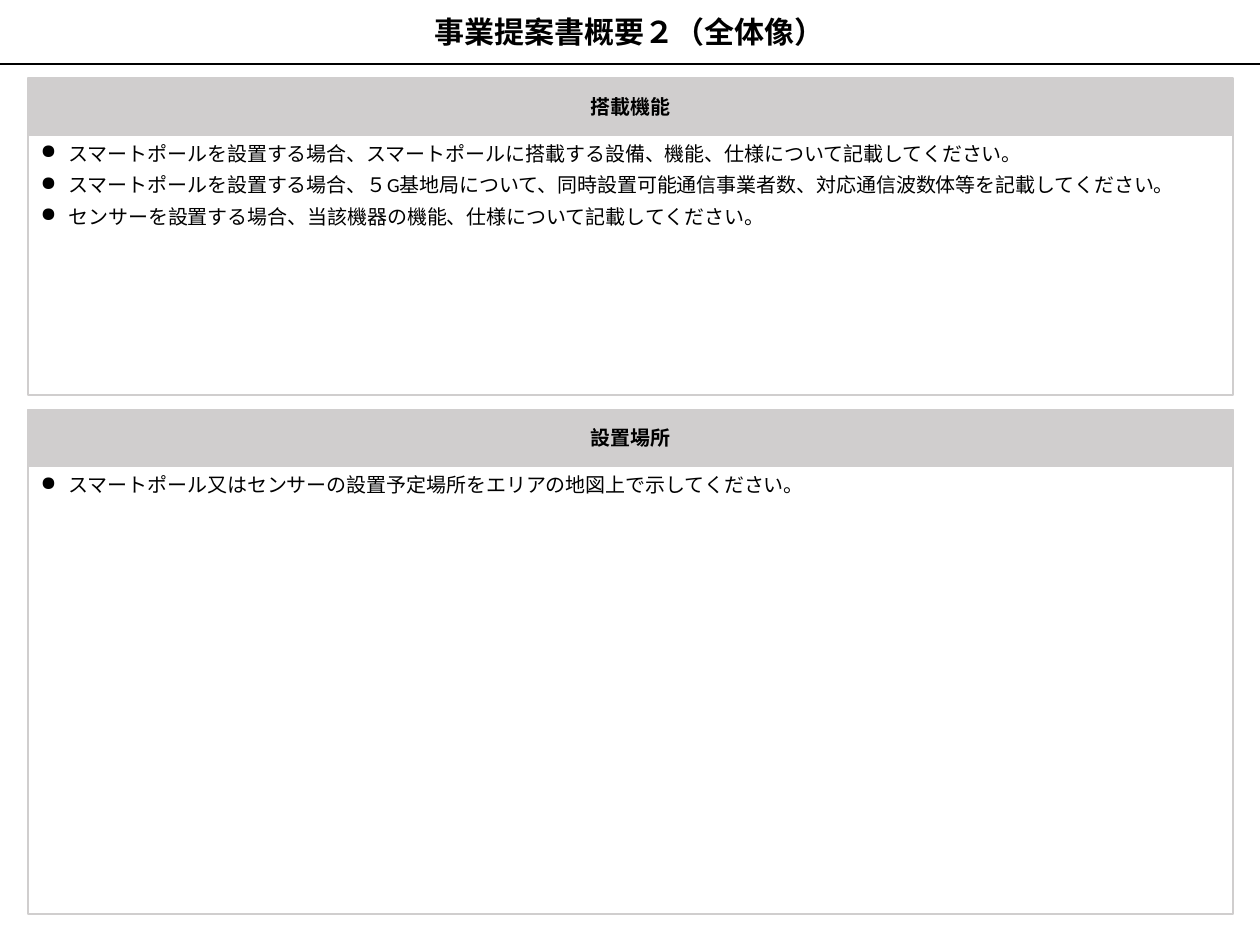
from dataclasses import dataclass

from lxml.etree import SubElement
from pptx import Presentation
from pptx.dml.color import RGBColor
from pptx.enum.shapes import MSO_CONNECTOR, MSO_SHAPE
from pptx.enum.text import MSO_ANCHOR as Anchor, PP_ALIGN as Align
from pptx.oxml.ns import qn
from pptx.shapes.autoshape import Shape
from pptx.slide import Slide
from pptx.text.text import _Paragraph as Paragraph
from pptx.util import Inches, Pt

BLACK = RGBColor(0x00, 0x00, 0x00)
WHITE = RGBColor(0xFF, 0xFF, 0xFF)
GRAY = RGBColor(0xD0, 0xCE, 0xCE)

SLIDE_WIDTH, SLIDE_HEIGHT = 14, 10.5
TITLE_HEIGHT = 0.71
SECTION_LEFT, SECTION_WIDTH = 0.31, 13.39
HEADING_HEIGHT = 0.63
SECTION_TOP, SECTION_GAP = 0.87, 0.16
BULLET_INDENT = 0.31

TITLE_FONT = {"name": "Arial", "size": Pt(24), "bold": True}
HEADING_FONT = {"name": "Calibri", "size": Pt(16), "bold": True}
BODY_FONT = {"name": "Calibri", "size": Pt(16), "bold": False}
SECTION_MARGINS = {
    "margin_left": Inches(0.14),
    "margin_right": Inches(0.14),
    "margin_top": Inches(0.07),
    "margin_bottom": Inches(0.07),
}
CENTERED = {"vertical_anchor": Anchor.MIDDLE, "word_wrap": True}
HEADING_FRAME = SECTION_MARGINS | {"vertical_anchor": Anchor.MIDDLE, "word_wrap": False}
BODY_FRAME = SECTION_MARGINS | {"vertical_anchor": Anchor.TOP, "word_wrap": True}


@dataclass(frozen=True)
class Section:
    heading: str
    body_height: float
    items: tuple[str, ...]


@dataclass(frozen=True)
class BoxStyle:
    fill: RGBColor
    line: RGBColor
    line_width: float
    frame: dict
    font: dict
    align: Align
    bulleted: bool = False


TITLE_STYLE = BoxStyle(WHITE, WHITE, 1, CENTERED, TITLE_FONT, Align.CENTER)
HEADING_STYLE = BoxStyle(GRAY, GRAY, 1.5, HEADING_FRAME, HEADING_FONT, Align.CENTER)
BODY_STYLE = BoxStyle(WHITE, GRAY, 1.5, BODY_FRAME, BODY_FONT, Align.LEFT, bulleted=True)

TITLE = "事業提案書概要２（全体像）"
SECTIONS = (
    Section("搭載機能", 2.89, (
        "スマートポールを設置する場合、スマートポールに搭載する設備、機能、仕様について記載してください。",
        "スマートポールを設置する場合、５G基地局について、同時設置可能通信事業者数、対応通信波数体等を記載してください。",
        "センサーを設置する場合、当該機器の機能、仕様について記載してください。",
    )),
    Section("設置場所", 4.98, (
        "スマートポール又はセンサーの設置予定場所をエリアの地図上で示してください。",
    )),
)


def apply_format(target: object, values: dict) -> None:
    for name, value in values.items():
        setattr(target, name, value)


def add_bullet(paragraph: Paragraph) -> None:
    """Give the paragraph a round bullet with a hanging indent."""
    paragraph.space_before = Pt(6)
    properties = paragraph._p.get_or_add_pPr()
    properties.set("marL", str(Inches(BULLET_INDENT)))
    properties.set("indent", str(-Inches(BULLET_INDENT)))
    SubElement(properties, qn("a:buChar"), char="●")


def add_box(slide: Slide, left: float, top: float, width: float, height: float,
            texts: tuple[str, ...], style: BoxStyle) -> Shape:
    """Draw a rectangle holding one paragraph per text."""
    shape = slide.shapes.add_shape(
        MSO_SHAPE.RECTANGLE, Inches(left), Inches(top), Inches(width), Inches(height))
    shape.shadow.inherit = False
    shape.fill.solid()
    shape.fill.fore_color.rgb = style.fill
    shape.line.color.rgb = style.line
    shape.line.width = Pt(style.line_width)
    frame = shape.text_frame
    apply_format(frame, style.frame)
    for index, text in enumerate(texts):
        paragraph = frame.add_paragraph() if index else frame.paragraphs[0]
        paragraph.alignment = style.align
        if style.bulleted:
            add_bullet(paragraph)
        run = paragraph.add_run()
        run.text = text
        apply_format(run.font, style.font)
        run.font.color.rgb = BLACK
    return shape


def add_title(slide: Slide) -> None:
    """Draw the title bar and the rule below it."""
    add_box(slide, 0, 0, SLIDE_WIDTH, TITLE_HEIGHT, (TITLE,), TITLE_STYLE)
    rule = slide.shapes.add_connector(
        MSO_CONNECTOR.STRAIGHT, Inches(0), Inches(TITLE_HEIGHT),
        Inches(SLIDE_WIDTH), Inches(TITLE_HEIGHT))
    rule.line.color.rgb = BLACK
    rule.line.width = Pt(1.5)
    SubElement(rule._element.spPr, qn("a:effectLst"))


def add_section(slide: Slide, section: Section, top: float) -> float:
    """Draw a heading bar with its body and return the bottom edge."""
    body_top = top + HEADING_HEIGHT
    add_box(slide, SECTION_LEFT, top, SECTION_WIDTH, HEADING_HEIGHT,
            (section.heading,), HEADING_STYLE)
    add_box(slide, SECTION_LEFT, body_top, SECTION_WIDTH, section.body_height,
            section.items, BODY_STYLE)
    return body_top + section.body_height


def main() -> None:
    presentation = Presentation()
    presentation.slide_width = Inches(SLIDE_WIDTH)
    presentation.slide_height = Inches(SLIDE_HEIGHT)
    slide = presentation.slides.add_slide(presentation.slide_layouts[6])
    add_title(slide)
    top = SECTION_TOP
    for section in SECTIONS:
        top = add_section(slide, section, top) + SECTION_GAP
    presentation.save("out.pptx")


if __name__ == "__main__":
    main()
